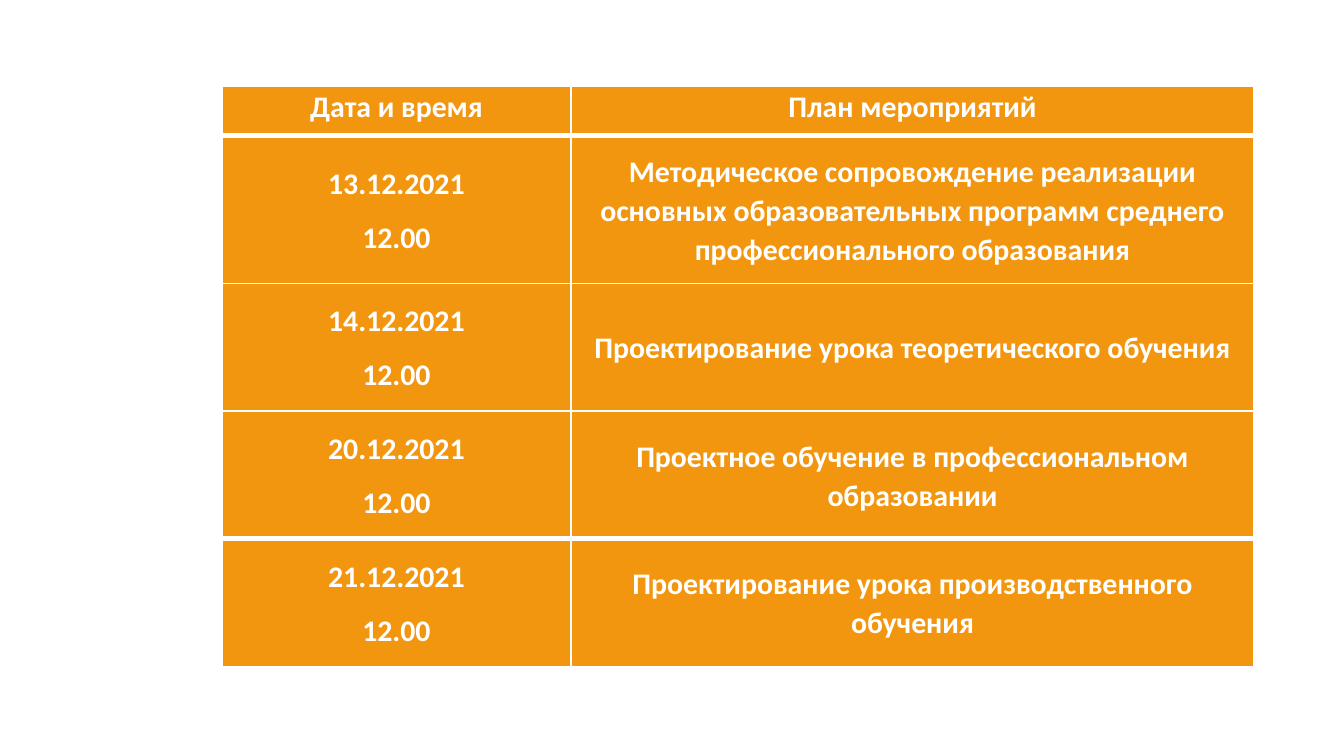
from pptx import Presentation
from pptx.dml.color import RGBColor
from pptx.enum import text as t
from pptx.oxml import parse_xml
from pptx.oxml.ns import nsdecls
from pptx.util import Inches, Pt

ORANGE = RGBColor(0xF3, 0x96, 0x0F)
WHITE = RGBColor(0xFF, 0xFF, 0xFF)

HEAD = ("Дата и время", "План мероприятий")
PLAN = [
    ("13.12.2021", "Методическое сопровождение реализации основных "
                   "образовательных программ среднего профессионального образования"),
    ("14.12.2021", "Проектирование урока теоретического обучения"),
    ("20.12.2021", "Проектное обучение в профессиональном образовании"),
    ("21.12.2021", "Проектирование урока производственного обучения"),
]
TIME = "12.00"
WIDTHS = (2.6, 5.08)
HEIGHTS = (0.37, 1.1, 0.95, 0.95, 0.95)


def add_edge(cell, side, width):
    """Draw one white border of a cell; call before the fill is set."""
    cell._tc.get_or_add_tcPr().append(parse_xml(
        f'<a:ln{side} {nsdecls("a")} w="{Pt(width)}"><a:solidFill>'
        f'<a:srgbClr val="{WHITE}"/></a:solidFill></a:ln{side}>'))


def fill_cell(cell, words, anchor, top, base):
    for side, width in (("L", 1), ("R", 1), ("T", top), ("B", base)):
        add_edge(cell, side, width)
    cell.fill.solid()
    cell.fill.fore_color.rgb = ORANGE
    cell.margin_left = cell.margin_right = Inches(0.05)
    cell.margin_top = cell.margin_bottom = 0
    cell.vertical_anchor = anchor
    cell.text = words
    for para in cell.text_frame.paragraphs:
        para.alignment = t.PP_ALIGN.CENTER
        para.line_spacing = 1.07
        para.space_after = Pt(8)
        font = para.font
        font.name, font.size, font.bold = "Calibri", Pt(16), True
        font.color.rgb = WHITE


def add_plan(slide):
    rows = [HEAD] + [(f"{date}\n{TIME}", topic) for date, topic in PLAN]
    table = slide.shapes.add_table(
        len(rows), len(HEAD), Inches(1.65), Inches(0.64),
        Inches(sum(WIDTHS)), Inches(sum(HEIGHTS))).table
    for col, width in zip(table.columns, WIDTHS):
        col.width = Inches(width)
    for row, height in zip(table.rows, HEIGHTS):
        row.height = Inches(height)

    # Thick rules lie under the header and above the last row
    last = len(rows) - 1
    thick = (1, last)
    for i, row in enumerate(rows):
        anchor = t.MSO_ANCHOR.MIDDLE if i else t.MSO_ANCHOR.TOP
        top = 3 if i in thick else 1
        base = 3 if i + 1 in thick else 1
        for j, words in enumerate(row):
            fill_cell(table.cell(i, j), words, anchor, top, base)


def main():
    deck = Presentation()
    # Widescreen, 16 to 9
    deck.slide_width = Inches(10)
    deck.slide_height = Inches(10) * 9 // 16
    # Blank layout: the slide has no title
    slide = deck.slides.add_slide(deck.slide_layouts[6])
    add_plan(slide)
    deck.save("out.pptx")


if __name__ == "__main__":
    main()
